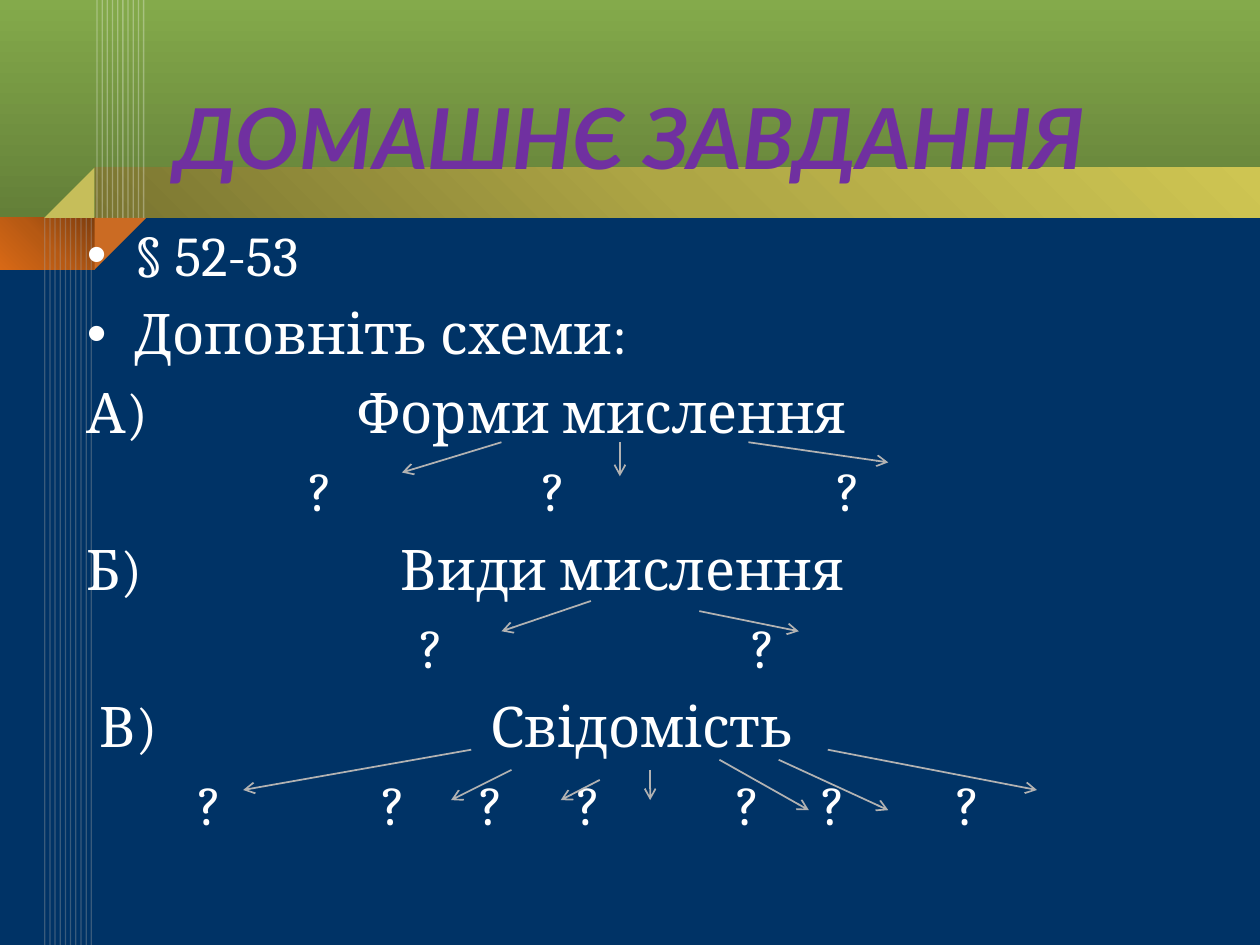
import pptx
import pptx.util
import pptx.dml.color
import pptx.enum.shapes
import pptx.enum.text
import pptx.oxml
import pptx.oxml.ns

Inches = pptx.util.Inches
Pt = pptx.util.Pt
RGBColor = pptx.dml.color.RGBColor
SHAPE = pptx.enum.shapes.MSO_SHAPE
qn = pptx.oxml.ns.qn

NAVY = RGBColor(0x00, 0x33, 0x66)
GREEN = RGBColor(0x84, 0xAA, 0x4B)
DARK_GREEN = RGBColor(0x63, 0x7F, 0x38)
DARK_OLIVE = RGBColor(0x7A, 0x75, 0x31)
OLIVE = RGBColor(0xAE, 0xA6, 0x45)
GOLD = RGBColor(0xCE, 0xC5, 0x52)
BROWN = RGBColor(0x80, 0x3E, 0x0D)
RUST = RGBColor(0xB6, 0x59, 0x13)
ORANGE = RGBColor(0xD8, 0x69, 0x16)
FOLD_ORANGE = RGBColor(0xCB, 0x6B, 0x23)
FOLD_GOLD = RGBColor(0xC6, 0xBE, 0x5A)
PURPLE = RGBColor(0x70, 0x30, 0xA0)
OUTLINE = RGBColor(0x6B, 0x66, 0x25)
WHITE = RGBColor(0xFF, 0xFF, 0xFF)
STRIPE_GRAY = RGBColor(0xA6, 0xA6, 0xA6)
ARROW_GRAY = RGBColor(0xB2, 0xB2, 0xB2)

LINEAR = '<a:lin ang="{}" scaled="0"/>'
CORNER = '<a:path path="circle"><a:fillToRect l="100000" b="100000"/></a:path>'

GAP_UNIT = 7.04
BULLETS = ["§ 52-53", "Доповніть схеми:"]
SCHEMES = [
    (0, ["А)", "Форми мислення"], [17]),
    (18, ["?"] * 3, [17, 22]),
    (0, ["Б)", "Види мислення"], [21]),
    (27, ["?"] * 2, [25]),
    (1, ["В)", "Свідомість"], [27]),
    (9, ["?"] * 7, [13, 6, 6, 11, 5, 9]),
]

ARROWS = [
    (3.98, 3.51, 3.19, 3.75), (4.92, 3.51, 4.92, 3.78), (5.94, 3.51, 7.05, 3.67),
    (4.69, 4.77, 3.98, 5.01), (5.55, 4.85, 6.34, 5.01),
    (3.74, 5.95, 1.93, 6.27), (6.57, 5.95, 8.23, 6.27), (4.06, 6.11, 3.58, 6.35),
    (6.18, 6.03, 7.05, 6.43), (4.76, 6.19, 4.45, 6.35), (5.71, 6.03, 6.42, 6.43),
    (5.16, 6.11, 5.16, 6.35),
]


def make(tag, attrs="", inner=""):
    ns = pptx.oxml.ns.nsdecls("a")
    return pptx.oxml.parse_xml(f"<a:{tag} {ns} {attrs}>{inner}</a:{tag}>")


def add_panel(s, box, kind, color, rotation=0):
    sp = s.shapes.add_shape(kind, *map(Inches, box))
    sp.shadow.inherit = False
    sp.line.fill.background()
    sp.fill.solid()
    sp.fill.fore_color.rgb = color
    sp.rotation = rotation
    return sp


def add_gradient(s, box, colors, direction):
    sp = add_panel(s, box, SHAPE.RECTANGLE, colors[0])
    stops = "".join(
        f'<a:gs pos="{100000 * i // (len(colors) - 1)}"><a:srgbClr val="{c}"/></a:gs>'
        for i, c in enumerate(colors))
    sp_pr = sp._element.spPr
    sp_pr.replace(sp_pr.find(qn("a:solidFill")),
                  make("gradFill", inner=f"<a:gsLst>{stops}</a:gsLst>{direction}"))


def add_line(s, ends, color, width):
    cn = s.shapes.add_connector(pptx.enum.shapes.MSO_CONNECTOR.STRAIGHT, *map(Inches, ends))
    cn.line.color.rgb = color
    cn.line.width = Pt(width)
    cn._element.spPr.append(make("effectLst"))
    return cn


def add_stripes(s, box, color, alpha, count=10):
    left, top, width, height = box
    for i in range(count):
        x = left + width * i / (count - 1)
        cn = add_line(s, (x, top, x, top + height), color, 0.75)
        clr = cn.line._ln.find(".//" + qn("a:srgbClr"))
        clr.append(make("alpha", f'val="{alpha * 1000}"'))


def add_backdrop(s, box):
    left, top, width, height = box
    band, strip, fold = 1.73, 0.4, 0.75
    bottom = top + band
    add_gradient(s, (left, top, width, band), [GREEN, DARK_GREEN], LINEAR.format(90 * 60000))
    add_gradient(s, (left + fold, bottom - strip, width - fold, strip),
                 [DARK_OLIVE, OLIVE, GOLD], LINEAR.format(315 * 60000))
    add_gradient(s, (left, bottom, fold, 0.41), [BROWN, RUST, ORANGE], CORNER)
    add_panel(s, (left + fold, bottom, 0.41, 0.41), SHAPE.RIGHT_TRIANGLE, FOLD_ORANGE, 90)
    add_panel(s, (left + fold - strip, bottom - strip, strip, strip),
              SHAPE.RIGHT_TRIANGLE, FOLD_GOLD, 270)
    add_stripes(s, (left + 0.77, top, 0.37, band), WHITE, 30)
    add_stripes(s, (left + 0.355, bottom, 0.37, height - band), STRIPE_GRAY, 35)


def place(s, sp, box):
    sp.left, sp.top, sp.width, sp.height = map(Inches, box)
    s.shapes._spTree.append(sp._element)
    sp.text_frame.word_wrap = True
    sp.text_frame.auto_size = pptx.enum.text.MSO_AUTO_SIZE.NONE
    return sp.text_frame


def add_run(p, text, font, size, color):
    r = p.add_run()
    r.text = text
    r.font.name = font
    r.font.size = Pt(size)
    r.font.color.rgb = color
    return r


def add_title(s, box):
    tf = place(s, s.shapes.title, box)
    tf.vertical_anchor = pptx.enum.text.MSO_ANCHOR.MIDDLE
    p = tf.paragraphs[0]
    p.alignment = pptx.enum.text.PP_ALIGN.CENTER
    r = add_run(p, "ДОМАШНЄ ЗАВДАННЯ", "Lato", 48, PURPLE)
    r.font.bold = r.font.italic = True
    r._r.get_or_add_rPr().insert(0, make(
        "ln", 'w="12700"', f'<a:solidFill><a:srgbClr val="{OUTLINE}"/></a:solidFill>'))


def add_scheme_line(p, lead, words, gaps):
    p_pr = p._p.get_or_add_pPr()
    p_pr.set("marL", str(Pt(lead * GAP_UNIT)))
    p_pr.set("indent", "0")
    p_pr.append(make("buNone"))
    add_run(p, words[0], "Cambria", 32, WHITE)
    for word, gap in zip(words[1:], gaps):
        r = add_run(p, " ", "Cambria", 32, WHITE)
        r._r.get_or_add_rPr().set("spc", str(round((gap - 1) * GAP_UNIT * 100)))
        add_run(p, word, "Cambria", 32, WHITE)


def add_task(s, box):
    tf = place(s, s.placeholders[1], box)
    for i, text in enumerate(BULLETS):
        p = tf.add_paragraph() if i else tf.paragraphs[0]
        add_run(p, text, "Cambria", 32, WHITE)
    for lead, words, gaps in SCHEMES:
        add_scheme_line(tf.add_paragraph(), lead, words, gaps)


def add_arrows(s):
    for ends in ARROWS:
        cn = add_line(s, ends, ARROW_GRAY, 1)
        cn.line._ln.append(make("tailEnd", 'type="arrow"'))


def main():
    prs = pptx.Presentation()
    prs.slide_width, prs.slide_height = Inches(10), Inches(7.5)
    s = prs.slides.add_slide(prs.slide_layouts[1])
    s.background.fill.solid()
    s.background.fill.fore_color.rgb = NAVY
    add_backdrop(s, (0, 0, 10, 7.5))
    add_title(s, (0.5, 0.32, 9, 1.51))
    add_task(s, (0.59, 1.7, 8.59, 5.67))
    add_arrows(s)
    prs.save("out.pptx")


if __name__ == "__main__":
    main()
